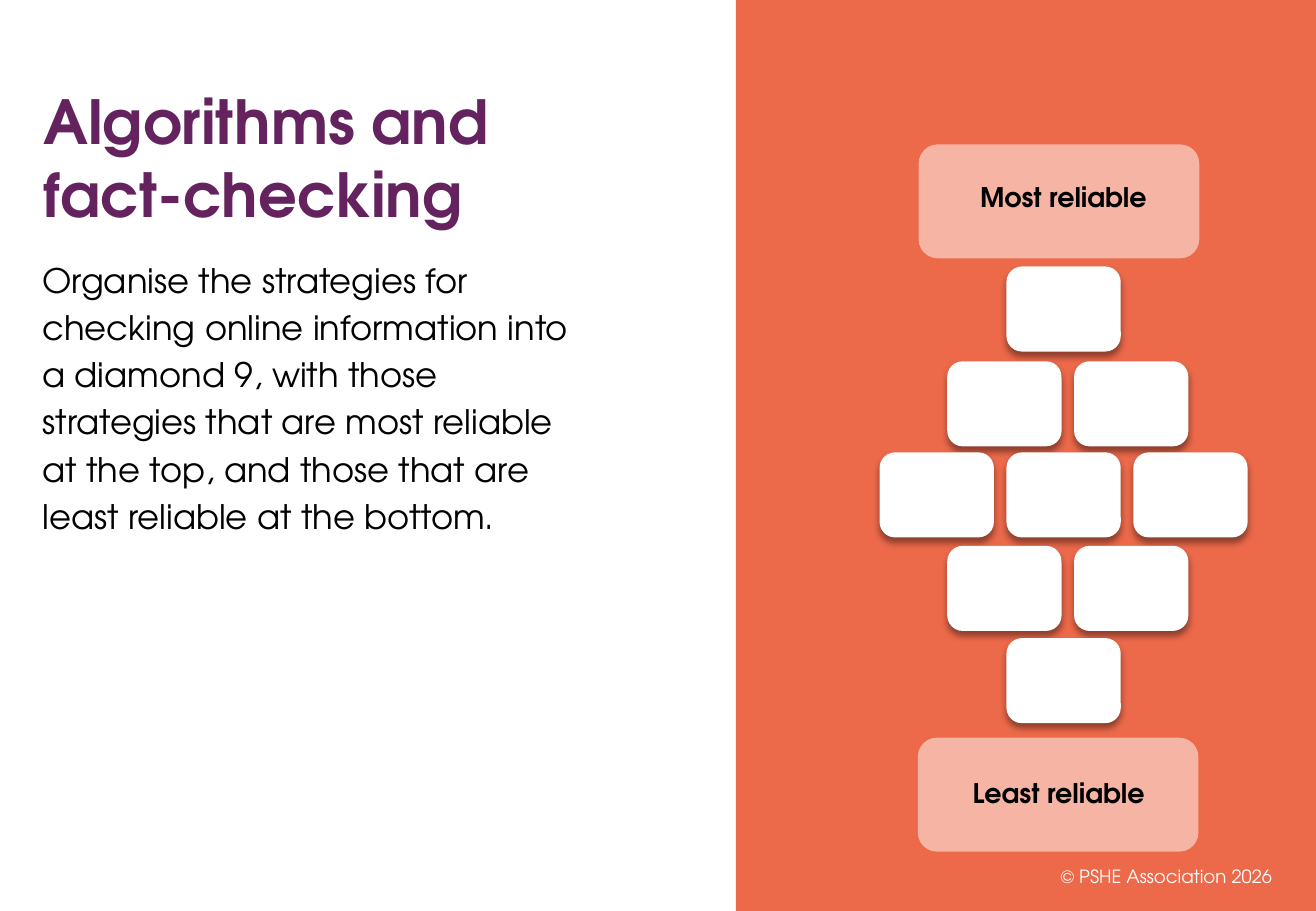
"""Build the diamond 9 slide on algorithms and fact-checking."""
from lxml import etree
from pptx import Presentation
from pptx.dml.color import RGBColor
from pptx.enum.shapes import MSO_SHAPE
from pptx.enum.text import MSO_ANCHOR, PP_ALIGN
from pptx.util import Pt

RECT, ROUNDED = MSO_SHAPE.RECTANGLE, MSO_SHAPE.ROUNDED_RECTANGLE
TOP, MIDDLE, BOTTOM = MSO_ANCHOR.TOP, MSO_ANCHOR.MIDDLE, MSO_ANCHOR.BOTTOM
LEFT, CENTER, RIGHT = PP_ALIGN.LEFT, PP_ALIGN.CENTER, PP_ALIGN.RIGHT
ORANGE = RGBColor(0xEC, 0x69, 0x4A)
PEACH = RGBColor(0xF6, 0xB4, 0xA5)
PURPLE = RGBColor(0x64, 0x23, 0x5E)
BLACK = RGBColor(0, 0, 0)
WHITE = RGBColor(0xFF, 0xFF, 0xFF)
FONT = "TeX Gyre Adventor"
SHADOW = (
    '<a:effectLst xmlns:a="http://schemas.openxmlformats.org/drawingml/2006/main">'
    '<a:outerShdw blurRad="50800" dist="38100" dir="5400000" algn="t" rotWithShape="0">'
    '<a:srgbClr val="000000"><a:alpha val="40000"/></a:srgbClr>'
    '</a:outerShdw></a:effectLst>'
)

prs = Presentation()
prs.slide_width, prs.slide_height = Pt(780), Pt(540)
s = prs.slides.add_slide(prs.slide_layouts[6])


def add_box(kind, x, y, w, h, color):
    """Add a filled shape without line or shadow."""
    sp = s.shapes.add_shape(kind, Pt(x), Pt(y), Pt(w), Pt(h))
    sp.shadow.inherit = False
    sp.fill.solid()
    sp.fill.fore_color.rgb = color
    sp.line.fill.background()
    return sp


def add_text(text, x, y, w, h, size, color, bold=False, align=LEFT, anchor=TOP, spacing=None):
    """Add a wrapped text box with one paragraph."""
    tf = s.shapes.add_textbox(Pt(x), Pt(y), Pt(w), Pt(h)).text_frame
    tf.word_wrap = True
    tf.vertical_anchor = anchor
    p = tf.paragraphs[0]
    p.alignment = align
    if spacing:
        p.line_spacing = Pt(spacing)
    r = p.add_run()
    r.text = text
    r.font.name, r.font.size, r.font.bold = FONT, Pt(size), bold
    r.font.color.rgb = color


add_box(RECT, 436.2, 0, 343.8, 540, ORANGE)
add_text("Algorithms and fact-checking", 18.7, 42.5, 348.5, 97.2, 36, PURPLE,
         bold=True, anchor=BOTTOM, spacing=43)
add_text("Organise the strategies for checking online information into a diamond 9, "
         "with those strategies that are most reliable at the top, and those that are "
         "least reliable at the bottom.", 18, 146.2, 337, 293.8, 20, BLACK, spacing=28)
add_text("© PSHE Association 2026", 585.4, 504.7, 175.7, 28.8, 10.8, WHITE,
         align=RIGHT, anchor=MIDDLE)

CARD_W, CARD_H, PITCH = 65.5, 48.2, 75.2
diamond_rows = [(1, 630.4, 159.1), (2, 632.9, 215.3), (3, 630.4, 269.3),
                (2, 632.9, 324.7), (1, 630.4, 379.4)]
for count, center, y in diamond_rows:
    first = center - ((count - 1) * PITCH + CARD_W) / 2
    for i in range(count):
        card = add_box(ROUNDED, first + i * PITCH, y, CARD_W, CARD_H, WHITE)
        card.line.color.rgb = WHITE
        card.line.width = Pt(2.25)
        effects = card.shadow
        effects.inherit = True
        card.element.spPr.append(etree.fromstring(SHADOW))

labels = [("Most reliable", 544.5, 85.6, 518.4, 103.7),
          ("Least reliable", 544, 437.3, 515.5, 456.5)]
for label, box_x, box_y, text_x, text_y in labels:
    add_box(ROUNDED, box_x, box_y, 166.3, 67.5, PEACH)
    add_text(label, text_x, text_y, 223.9, 26.6, 16, BLACK, bold=True, align=CENTER)

prs.save("out.pptx")
